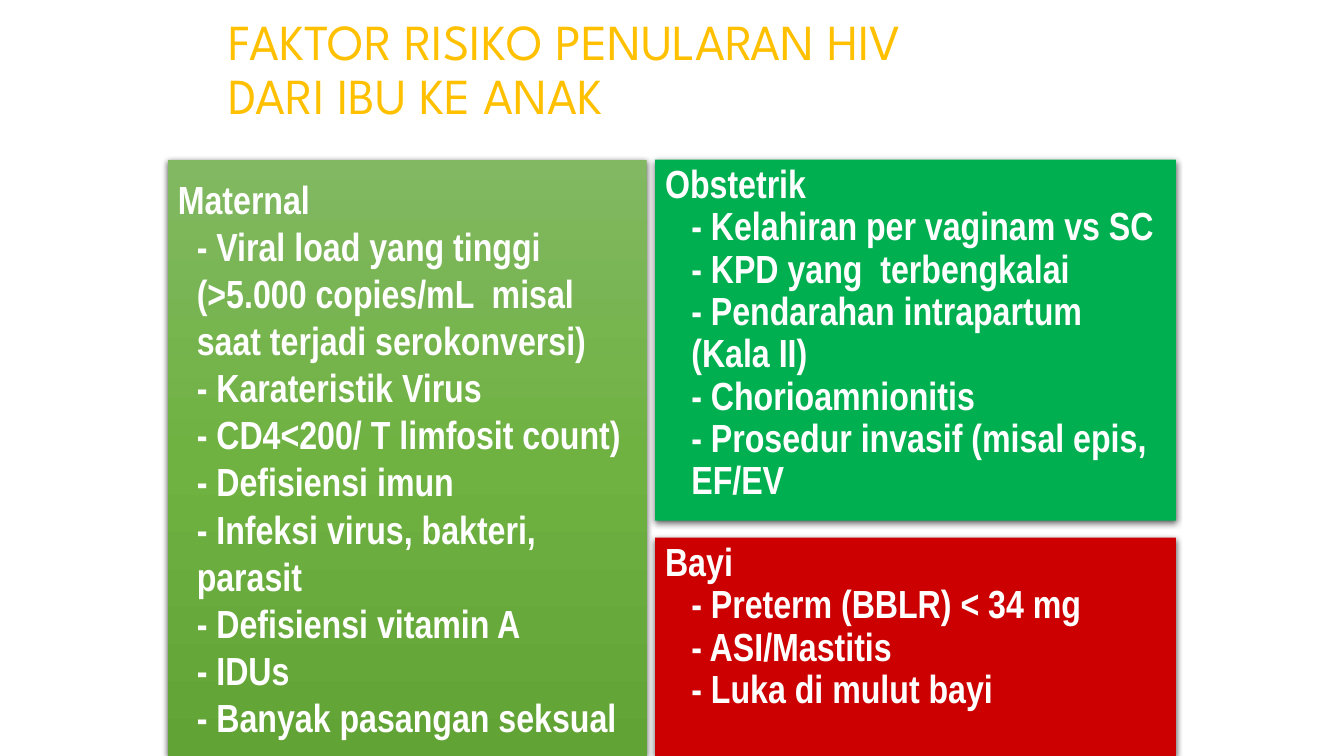
from pptx import Presentation
from pptx import util as u
from pptx.dml.color import RGBColor
from pptx.enum import shapes, text
from pptx.oxml import parse_xml
from pptx.oxml.ns import nsdecls, qn

# Content
TITLE = "FAKTOR RISIKO PENULARAN HIV \vDARI IBU KE ANAK"
MATERNAL = ["Viral load yang tinggi (>5.000 copies/mL  misal saat terjadi serokonversi)",
            "Karateristik Virus", "CD4<200/ T limfosit count)", "Defisiensi imun",
            "Infeksi virus, bakteri, parasit", "Defisiensi vitamin A", "IDUs",
            "Banyak pasangan seksual"]
OBSTETRIK = ["Kelahiran per vaginam vs SC", "KPD yang  terbengkalai",
             "Pendarahan intrapartum (Kala II)", "Chorioamnionitis",
             "Prosedur invasif (misal epis, EF/EV"]
BAYI = ["Preterm (BBLR) < 34 mg", "ASI/Mastitis", "Luka di mulut bayi"]

COLORS = {"title": "FFC000", "text": "FFFFFF", "shadow": "000000",
          "obstetrik": "00B050", "bayi": "CC0000"}
MATERNAL_STOPS = [(0, "81B861"), (50, "6FB242"), (100, "62A336")]

# Layout in points
WIDTH, HEIGHT = 960, 540
TOP = 114
LEFT_X, LEFT_W = 120, 342
RIGHT_X, RIGHT_W = 468, 372
OBSTETRIK_H = 258
BAYI_Y = 384
MIDDLE, UPPER = text.MSO_ANCHOR.MIDDLE, text.MSO_ANCHOR.TOP

prs = Presentation()
prs.slide_width, prs.slide_height = u.Pt(WIDTH), u.Pt(HEIGHT)
slide = prs.slides.add_slide(prs.slide_layouts[6])


def write(frame, lines, *, font, size, color, bold=False, anchor=UPPER, spacing=1.0, indent=0):
    """Write the lines; every line after the first is indented."""
    frame.word_wrap = True
    frame.vertical_anchor = anchor
    for i, line in enumerate(lines):
        paragraph = frame.add_paragraph() if i else frame.paragraphs[0]
        paragraph.text = line
        paragraph.alignment = text.PP_ALIGN.LEFT
        paragraph.line_spacing = spacing
        if i:
            paragraph._p.get_or_add_pPr().set("marL", str(u.Pt(indent)))
        for run in paragraph.runs:
            run.font.name, run.font.size, run.font.bold = font, u.Pt(size), bold
            run.font.color.rgb = RGBColor.from_string(color)


def fill_gradient(shape, stops):
    """Fill the shape from top to bottom."""
    marks = "".join(f'<a:gs pos="{pos * 1000}"><a:srgbClr val="{color}"/></a:gs>'
                    for pos, color in stops)
    gradient = parse_xml(f'<a:gradFill {nsdecls("a")} rotWithShape="1"><a:gsLst>{marks}</a:gsLst>'
                         '<a:lin ang="5400000" scaled="0"/></a:gradFill>')
    shape._element.spPr.find(qn("a:prstGeom")).addnext(gradient)


def add_shadow(shape):
    shape.shadow.inherit = False
    shape._element.spPr.find(qn("a:effectLst")).append(parse_xml(
        f'<a:outerShdw {nsdecls("a")} blurRad="{u.Pt(4.5)}" dist="{u.Pt(1.5)}" dir="5400000" '
        f'algn="ctr" rotWithShape="0"><a:srgbClr val="{COLORS["shadow"]}">'
        '<a:alpha val="63000"/></a:srgbClr></a:outerShdw>'))


def add_panel(heading, factors, box, fill, **layout):
    panel = slide.shapes.add_shape(shapes.MSO_SHAPE.RECTANGLE, *map(u.Pt, box))
    if isinstance(fill, list):
        fill_gradient(panel, fill)
    else:
        panel.fill.solid()
        panel.fill.fore_color.rgb = RGBColor.from_string(fill)
    panel.line.fill.background()
    add_shadow(panel)
    write(panel.text_frame, [heading] + [f"- {factor}" for factor in factors],
          font="Arial Narrow", size=28, color=COLORS["text"], bold=True, **layout)


# Title
title = slide.shapes.add_textbox(u.Pt(156), u.Pt(6), u.Pt(648), u.Pt(90))
write(title.text_frame, [TITLE], font="League Spartan", size=36, color=COLORS["title"],
      anchor=MIDDLE, spacing=0.9)

# Risk factor panels
add_panel("Maternal", MATERNAL, (LEFT_X, TOP, LEFT_W, HEIGHT - TOP), MATERNAL_STOPS,
          anchor=MIDDLE, indent=13.5)
add_panel("Obstetrik", OBSTETRIK, (RIGHT_X, TOP, RIGHT_W, OBSTETRIK_H), COLORS["obstetrik"],
          spacing=0.9, indent=18.75)
add_panel("Bayi", BAYI, (RIGHT_X, BAYI_Y, RIGHT_W, HEIGHT - BAYI_Y), COLORS["bayi"],
          spacing=0.9, indent=18.75)

prs.save("out.pptx")
